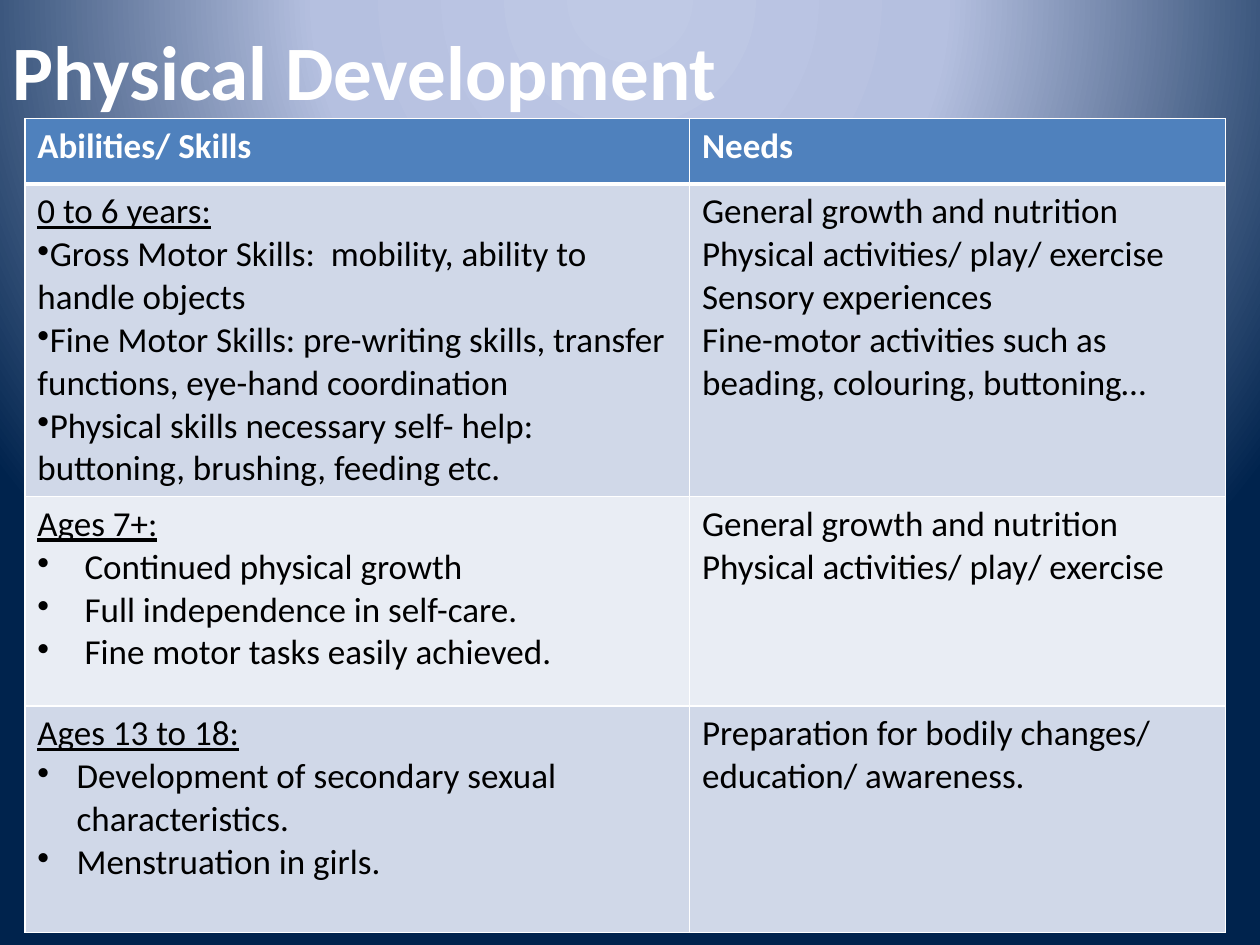
import pptx
import pptx.util
import pptx.oxml
import pptx.oxml.ns
import pptx.dml.color
import pptx.enum.text
import lxml.etree

Cm, Pt = pptx.util.Cm, pptx.util.Pt

COLOURS = {
    "white": "FFFFFF", "text": "000000", "header": "4F81BD",
    "odd_band": "D0D8E8", "even_band": "E9EDF4",
    "glow": "BFC9E5", "haze": "B5C0E0", "navy": "00234D",
}
FONT = "Calibri"

# Content: each stage has a heading, its skills, the bullet indent in cm, and its needs
HEADING = "Physical Development"
COLUMN_HEADS = ["Abilities/ Skills", "Needs"]
STAGES = [
    ("0 to 6 years:",
     ["Gross Motor Skills:  mobility, ability to handle objects",
      "Fine Motor Skills: pre-writing skills, transfer functions, eye-hand coordination",
      "Physical skills necessary self- help: buttoning, brushing, feeding etc."],
     0,
     ["General growth and nutrition",
      "Physical activities/ play/ exercise",
      "Sensory experiences",
      "Fine-motor activities such as beading, colouring, buttoning…"]),
    ("Ages 7+:",
     ["Continued physical growth",
      "Full independence in self-care.",
      "Fine motor tasks easily achieved."],
     0.95,
     ["General growth and nutrition",
      "Physical activities/ play/ exercise"]),
    ("Ages 13 to 18:",
     ["Development of secondary sexual characteristics.",
      "Menstruation in girls."],
     0.79,
     ["Preparation for bodily changes/ education/ awareness."]),
]
COLUMN_WIDTHS = [13.4, 10.8]
ROW_HEIGHTS = [1.32, 6.3, 4.22, 4.57]
GLOW_STOPS = [(0, "glow"), (40, "haze"), (100, "navy")]


def rgb(name):
    return pptx.dml.color.RGBColor.from_string(COLOURS[name])


def write(paragraph, text, colour, **formats):
    run = paragraph.add_run()
    run.text = text
    for key, value in {"name": FONT, "size": Pt(20), **formats}.items():
        setattr(run.font, key, value)
    run.font.color.rgb = rgb(colour)


def add_bullet(paragraph, indent):
    properties = paragraph._p.get_or_add_pPr()
    properties.set("marL", str(Cm(indent)))
    properties.set("indent", str(-Cm(indent)))
    bullet = lxml.etree.SubElement(properties, pptx.oxml.ns.qn("a:buChar"))
    bullet.set("char", "•")


def dress_cell(cell, fill, top=1, bottom=1):
    properties = cell._tc.get_or_add_tcPr()
    for side, points in {"L": 1, "R": 1, "T": top, "B": bottom}.items():
        properties.append(pptx.oxml.parse_xml(
            f'<a:ln{side} {pptx.oxml.ns.nsdecls("a")} w="{Pt(points)}"><a:solidFill>'
            f'<a:srgbClr val="{COLOURS["white"]}"/></a:solidFill></a:ln{side}>'))
    cell.fill.solid()
    cell.fill.fore_color.rgb = rgb(fill)


def fill_cell(cell, lines):
    """Each line is (text, underlined, bullet indent or None)."""
    frame = cell.text_frame
    for number, (text, underlined, indent) in enumerate(lines):
        paragraph = frame.add_paragraph() if number else frame.paragraphs[0]
        if indent is not None:
            add_bullet(paragraph, indent)
        write(paragraph, text, "text", bold=False, underline=underlined)


def paint_background(slide):
    slide.background.fill.gradient()
    gradient = slide.element.find(".//" + pptx.oxml.ns.qn("a:gradFill"))
    stops = "".join(f'<a:gs pos="{place * 1000}"><a:srgbClr val="{COLOURS[name]}"/></a:gs>'
                    for place, name in GLOW_STOPS)
    gradient.getparent().replace(gradient, pptx.oxml.parse_xml(
        f'<a:gradFill {pptx.oxml.ns.nsdecls("a")} rotWithShape="1"><a:gsLst>{stops}</a:gsLst>'
        '<a:path path="circle"><a:fillToRect l="50000" t="-80000" r="50000" b="180000"/>'
        '</a:path></a:gradFill>'))


def main():
    deck = pptx.Presentation()
    deck.slide_width, deck.slide_height = Cm(25.4), Cm(19.05)
    slide = deck.slides.add_slide(deck.slide_layouts[5])
    paint_background(slide)

    # Title
    title = slide.shapes.title
    place = {"left": 0, "top": 0.33, "width": 22.86, "height": 2.16}
    for key, value in place.items():
        setattr(title, key, Cm(value))
    title.text_frame.vertical_anchor = pptx.enum.text.MSO_ANCHOR.MIDDLE
    title_line = title.text_frame.paragraphs[0]
    title_line.alignment = pptx.enum.text.PP_ALIGN.LEFT
    write(title_line, HEADING, "white", size=Pt(44), bold=True)

    # Table grid
    table = slide.shapes.add_table(
        len(ROW_HEIGHTS), len(COLUMN_WIDTHS), Cm(0.5), Cm(2.39),
        Cm(sum(COLUMN_WIDTHS)), Cm(sum(ROW_HEIGHTS))).table
    for column, width in zip(table.columns, COLUMN_WIDTHS):
        column.width = Cm(width)
    for row, height in zip(table.rows, ROW_HEIGHTS):
        row.height = Cm(height)

    # Header row
    for cell, head in zip(table.rows[0].cells, COLUMN_HEADS):
        dress_cell(cell, "header", bottom=3)
        write(cell.text_frame.paragraphs[0], head, "white", bold=True)

    # One row for each stage
    for number, (stage, skills, indent, needs) in enumerate(STAGES, 1):
        skills_cell, needs_cell = table.rows[number].cells
        for cell in (skills_cell, needs_cell):
            dress_cell(cell, "odd_band" if number % 2 else "even_band",
                       top=3 if number == 1 else 1)
        fill_cell(skills_cell, [(stage, True, None)]
                  + [(skill, False, indent) for skill in skills])
        fill_cell(needs_cell, [(need, False, None) for need in needs])

    deck.save("out.pptx")


if __name__ == "__main__":
    main()
